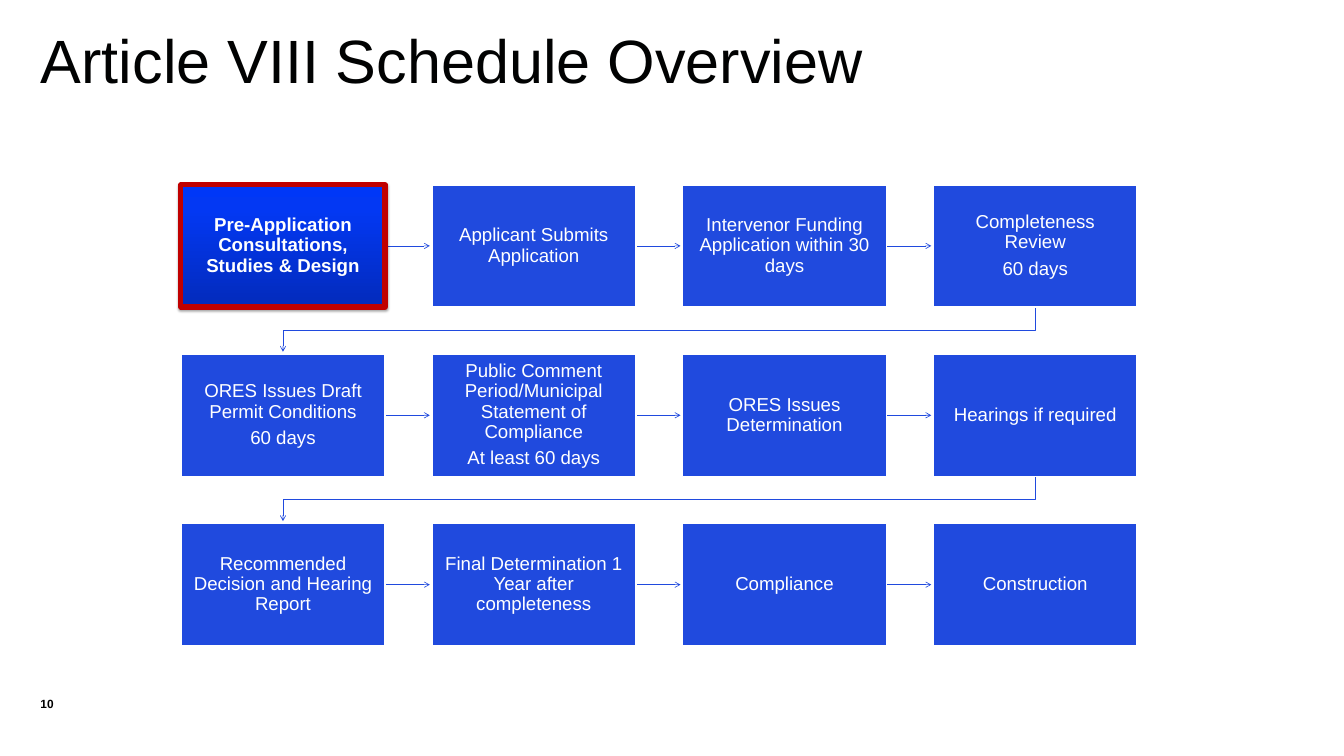
from copy import deepcopy

from lxml import etree
from pptx import Presentation, util as u
from pptx.dml.color import RGBColor
from pptx.enum import shapes, text
from pptx.oxml import ns

BLUE = RGBColor(0x20, 0x4A, 0xDE)
RED = RGBColor(0xC0, 0x00, 0x00)
WHITE = RGBColor(0xFF, 0xFF, 0xFF)
BLACK = RGBColor(0x00, 0x00, 0x00)
INK = RGBColor(0x01, 0x02, 0x02)
GLOW = [(0, RGBColor(0x03, 0x2B, 0xBB)), (0.8, RGBColor(0x03, 0x38, 0xF3)),
        (1, RGBColor(0x00, 0x37, 0xF7))]

# Grid in centimetres
LEFT, TOP = 7.52, 7.68
WIDE, HIGH = 8.48, 5.08
STEP, DROP = 10.42, 7.04
REACH = 1.86  # length of an arrow's run to the next box

STAGES = [
    ["Pre-Application Consultations, Studies & Design",
     "Applicant Submits Application",
     "Intervenor Funding Application within 30 days",
     "Completeness Review\n60 days"],
    ["ORES Issues Draft Permit Conditions\n60 days",
     "Public Comment Period/Municipal Statement of Compliance\nAt least 60 days",
     "ORES Issues Determination",
     "Hearings if required"],
    ["Recommended Decision and Hearing Report",
     "Final Determination 1 Year after completeness",
     "Compliance",
     "Construction"],
]


class Chart:
    font = "Arial"

    def __init__(self, slide):
        self.items = slide.shapes

    def fill_in(self, frame, words, size, color, bold=False, inset=0):
        frame.text = words
        frame.word_wrap = True
        frame.margin_left = frame.margin_right = u.Cm(inset)
        frame.margin_top = frame.margin_bottom = u.Cm(inset)
        for para in frame.paragraphs:
            for run in para.runs:
                run.font.name = self.font
                run.font.size = u.Pt(size)
                run.font.bold = bold
                run.font.color.rgb = color

    def label(self, x, y, w, h, words, size, color, bold=False):
        box = self.items.add_textbox(u.Cm(x), u.Cm(y), u.Cm(w), u.Cm(h))
        self.fill_in(box.text_frame, words, size, color, bold)
        return box.text_frame

    def stage(self, x, y, words, bold=False):
        box = self.items.add_shape(shapes.MSO_SHAPE.RECTANGLE, u.Cm(x), u.Cm(y),
                                   u.Cm(WIDE), u.Cm(HIGH))
        box.shadow.inherit = False
        box.fill.solid()
        box.fill.fore_color.rgb = BLUE
        box.line.color.rgb = WHITE
        box.line.width = u.Pt(2)
        frame = box.text_frame
        self.fill_in(frame, words, 22, WHITE, bold, 0.43)
        frame.vertical_anchor = text.MSO_ANCHOR.MIDDLE
        for para in frame.paragraphs:
            para.alignment = text.PP_ALIGN.CENTER
            para.line_spacing = 0.9
            para.space_after = u.Pt(7.7)
        return box

    def stress(self, box):
        box.line.color.rgb = RED
        box.line.width = u.Pt(6)
        box.fill.gradient()
        box.fill.gradient_angle = 90
        last = box._element.spPr.find(".//" + ns.qn("a:gs") + "[2]")
        last.addnext(deepcopy(last))
        for stop, (place, color) in zip(box.fill.gradient_stops, GLOW):
            stop.position = place
            stop.color.rgb = color
        shade = etree.SubElement(
            box._element.spPr.find(ns.qn("a:effectLst")), ns.qn("a:outerShdw"),
            blurRad=str(u.Pt(3.1)), dist=str(u.Pt(1.8)), dir="5400000", rotWithShape="0")
        tint = etree.SubElement(shade, ns.qn("a:srgbClr"), val="000000")
        etree.SubElement(tint, ns.qn("a:alpha"), val="35000")

    def point(self, line):
        """Style a line as a thin arrow and send it behind the boxes."""
        line.line.color.rgb = BLUE
        line.line.width = u.Pt(0.75)
        props = line._element.spPr
        etree.SubElement(props.find(ns.qn("a:ln")), ns.qn("a:tailEnd"), type="arrow")
        if props.find(ns.qn("a:effectLst")) is None:
            etree.SubElement(props, ns.qn("a:effectLst"))
        self.items._spTree.insert(2, line._element)

    def arrow(self, box):
        x, y = box.left + box.width, box.top + box.height // 2
        line = self.items.add_connector(shapes.MSO_CONNECTOR.STRAIGHT,
                                        x, y, x + u.Cm(REACH), y)
        line.begin_connect(box, 3)
        self.point(line)

    def bend(self, x1, x2, y):
        spots = [(x1, y + 0.96), (x2, y + 0.96), (x2, y + 1.86)]
        pen = self.items.build_freeform(u.Cm(x1), u.Cm(y))
        pen.add_line_segments([(u.Cm(a), u.Cm(b)) for a, b in spots], close=False)
        line = pen.convert_to_shape()
        line.shadow.inherit = False
        line.fill.background()
        self.point(line)


def main():
    deck = Presentation()
    deck.slide_width, deck.slide_height = u.Cm(55.85), u.Cm(31.42)
    chart = Chart(deck.slides.add_slide(deck.slide_layouts[6]))

    # Title and page number
    title = chart.label(1.7, 0.74, 52.2, 3.07, "Article VIII Schedule Overview", 72, INK)
    title.margin_top = u.Cm(0.2)
    page = chart.label(1.68, 28.98, 3.61, 0.58, "10", 14, BLACK, True)
    page.vertical_anchor = text.MSO_ANCHOR.BOTTOM

    # Boxes, with an arrow to the next one in the row
    for row, names in enumerate(STAGES):
        y = TOP + row * DROP
        for col, words in enumerate(names):
            first = row == col == 0
            box = chart.stage(LEFT + col * STEP, y, words, first)
            if first:
                chart.stress(box)
            if col < len(names) - 1:
                chart.arrow(box)

        # Bent arrow down to the next row
        if row < len(STAGES) - 1:
            mid = LEFT + WIDE / 2
            chart.bend(mid + (len(names) - 1) * STEP, mid, y + HIGH)

    deck.save("out.pptx")


if __name__ == "__main__":
    main()
